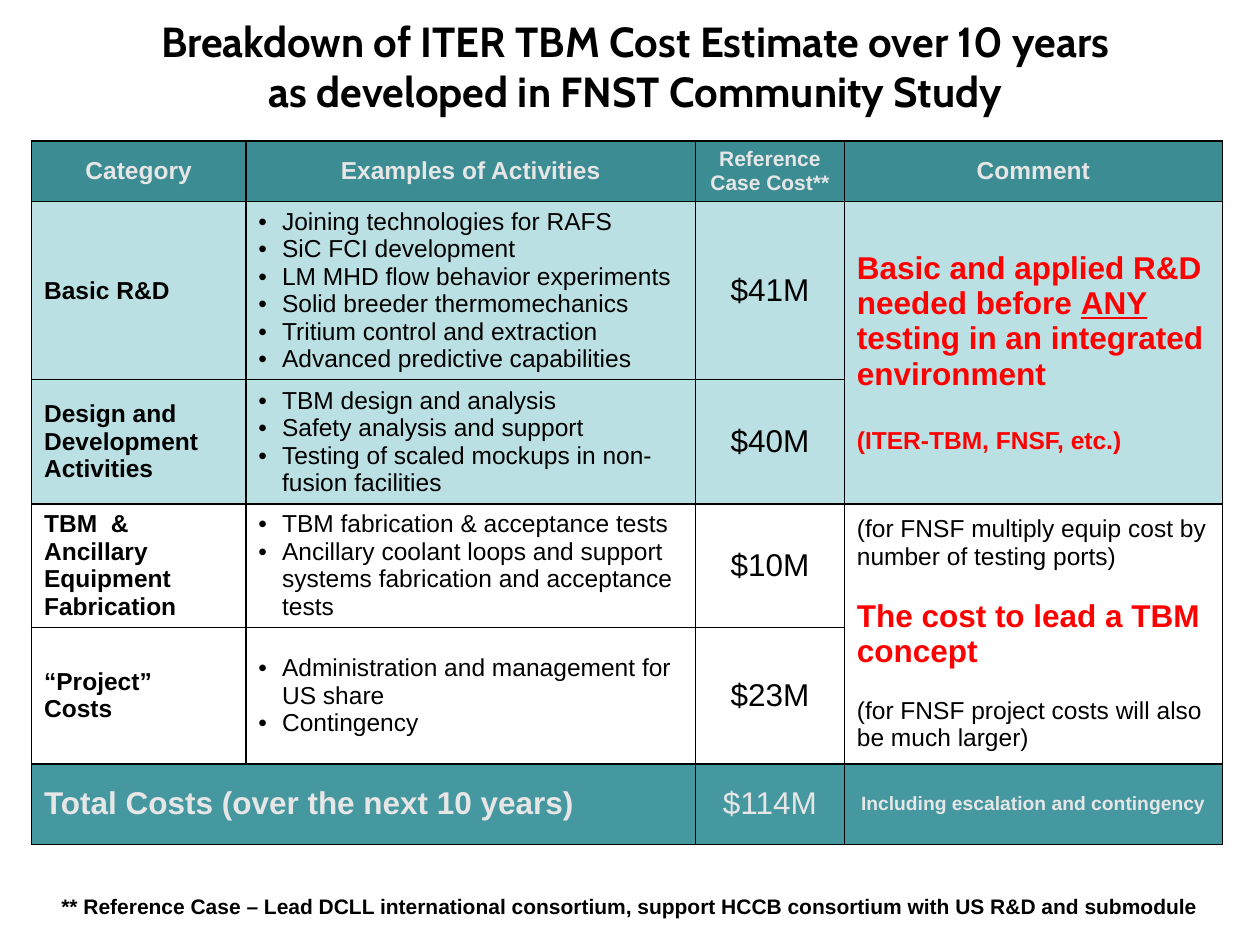
from copy import deepcopy

from lxml import etree
from pptx import Presentation
from pptx.dml.color import RGBColor
from pptx.enum.text import MSO_ANCHOR, MSO_AUTO_SIZE, PP_ALIGN
from pptx.oxml.ns import qn
from pptx.util import Pt

LEFT, CENTER = PP_ALIGN.LEFT, PP_ALIGN.CENTER
MIDDLE = MSO_ANCHOR.MIDDLE
TITLE_ONLY = 5

COLORS = {
    "black": "000000",
    "red": "FF0000",
    "pale": "E6E6E6",
    "header": "3C8C93",
    "research": "BBE0E3",
    "total": "4597A0",
}

COLUMN_WIDTHS = [122.5, 257, 85, 216]
ROW_HEIGHTS = [34.5, 102, 71, 70.5, 78, 46]

HEADINGS = [
    ("Category", 14),
    ("Examples of Activities", 14),
    (["Reference", "Case Cost**"], 12),
    ("Comment", 14),
]

# category, activities, cost, fill
COST_ROWS = [
    ("Basic R&D",
     ["Joining technologies for RAFS", "SiC FCI development",
      "LM MHD flow behavior experiments", "Solid breeder thermomechanics",
      "Tritium control and extraction", "Advanced predictive capabilities"],
     "$41M", "research"),
    ("Design and Development Activities",
     ["TBM design and analysis", "Safety analysis and support",
      "Testing of scaled mockups in non-fusion facilities"],
     "$40M", "research"),
    ("TBM  & Ancillary Equipment Fabrication",
     ["TBM fabrication & acceptance tests",
      "Ancillary coolant loops and support systems fabrication "
      "and acceptance tests"],
     "$10M", None),
    ("“Project” \nCosts",
     ["Administration and management for US share", "Contingency"],
     "$23M", None),
]


def write(frame, content, **fmt):
    """Write a string or a list of paragraphs; each is a string or (text, format) runs."""
    paragraphs = [content] if isinstance(content, str) else content
    for index, runs in enumerate(paragraphs):
        paragraph = frame.paragraphs[0] if index == 0 else frame.add_paragraph()
        paragraph.alignment = fmt.get("align", LEFT)
        paragraph.space_before = Pt(fmt.get("gap", 0) if index else 0)
        paragraph.line_spacing = fmt.get("line_spacing", 1.0)
        if fmt.get("bullet"):
            add_bullet(paragraph)
        for text, changes in [(runs, {})] if isinstance(runs, str) else runs:
            add_runs(paragraph, text, **{**fmt, **changes})


def add_runs(paragraph, text, size=14, color="black", bold=False,
             underline=False, font="Arial", **_):
    for index, line in enumerate(text.split("\n")):
        if index:
            paragraph.add_line_break()
            line_break = paragraph._p.findall(qn("a:br"))[-1]
            line_break.append(deepcopy(run.font._element))
        run = paragraph.add_run()
        run.text = line
        run.font.name = font
        run.font.size = Pt(size)
        run.font.bold = bold
        run.font.underline = underline
        run.font.color.rgb = RGBColor.from_string(COLORS[color])


def add_bullet(paragraph, indent=13.5):
    properties = paragraph._p.get_or_add_pPr()
    properties.set("marL", str(Pt(indent)))
    properties.set("indent", str(-Pt(indent)))
    etree.SubElement(properties, qn("a:buFont"), typeface="Arial")
    etree.SubElement(properties, qn("a:buChar"), char="•")


def add_borders(cell, width=1):
    properties = cell._tc.get_or_add_tcPr()
    for side in ("lnL", "lnR", "lnT", "lnB"):
        line = etree.SubElement(properties, qn(f"a:{side}"), w=str(Pt(width)))
        fill = etree.SubElement(line, qn("a:solidFill"))
        etree.SubElement(fill, qn("a:srgbClr"), val=COLORS["black"])


class CostSlide:
    """Holds the presentation, its current slide and the shared style."""

    def __init__(self):
        self.deck = Presentation()
        self.deck.slide_width, self.deck.slide_height = Pt(720), Pt(540)
        self.slide = self.deck.slides.add_slide(self.deck.slide_layouts[TITLE_ONLY])

    def title(self, text, left, top, width, height):
        title = self.slide.shapes.title
        title.left, title.top = Pt(left), Pt(top)
        title.width, title.height = Pt(width), Pt(height)
        frame = title.text_frame
        frame.auto_size = MSO_AUTO_SIZE.NONE
        frame.vertical_anchor = MIDDLE
        write(frame, text, size=24, bold=True, font="Cabin", align=CENTER)

    def table(self, left, top, widths, heights):
        table = self.slide.shapes.add_table(
            len(heights), len(widths), Pt(left), Pt(top),
            Pt(sum(widths)), Pt(sum(heights))).table
        table.first_row = table.horz_banding = False
        for column, width in zip(table.columns, widths):
            column.width = Pt(width)
        for row, height in zip(table.rows, heights):
            row.height = Pt(height)
        for cell in table.iter_cells():
            add_borders(cell)
            cell.fill.background()
        return table

    def cell(self, cell, content, fill=None, **fmt):
        cell.vertical_anchor = MIDDLE
        if fill:
            cell.fill.solid()
            cell.fill.fore_color.rgb = RGBColor.from_string(COLORS[fill])
        write(cell.text_frame, content, **fmt)

    def note(self, text, left, top, width, height, **fmt):
        frame = self.slide.shapes.add_textbox(
            Pt(left), Pt(top), Pt(width), Pt(height)).text_frame
        frame.word_wrap = True
        write(frame, text, **fmt)


def fill_cost_table(page, table):
    for column, (heading, size) in enumerate(HEADINGS):
        page.cell(table.cell(0, column), heading, "header", size=size,
                  color="pale", bold=True, align=CENTER)

    for row, (category, activities, cost, fill) in enumerate(COST_ROWS, start=1):
        page.cell(table.cell(row, 0), category, fill, bold=True)
        page.cell(table.cell(row, 1), activities, fill, bullet=True)
        page.cell(table.cell(row, 2), cost, fill, size=18, align=CENTER)

    for first_row in (1, 3):
        table.cell(first_row, 3).merge(table.cell(first_row + 1, 3))
    page.cell(table.cell(1, 3), [
        [("Basic and applied R&D needed before ", {}),
         ("ANY", {"underline": True}),
         (" testing in an integrated environment", {})],
        [("(ITER-TBM, FNSF, etc.)", {"size": 14})],
    ], "research", size=18, color="red", bold=True, gap=20)
    page.cell(table.cell(3, 3), [
        "(for FNSF multiply equip cost by number of testing ports)",
        [("The cost to lead a TBM concept",
          {"size": 18, "color": "red", "bold": True})],
        "(for FNSF project costs will also be much larger)",
    ], gap=16)

    total_row = len(COST_ROWS) + 1
    table.cell(total_row, 0).merge(table.cell(total_row, 1))
    page.cell(table.cell(total_row, 0), "Total Costs (over the next 10 years)",
              "total", size=18, color="pale", bold=True)
    page.cell(table.cell(total_row, 2), "$114M", "total", size=18,
              color="pale", align=CENTER)
    page.cell(table.cell(total_row, 3), "Including escalation and contingency",
              "total", size=11, color="pale", bold=True, align=CENTER)


def main():
    page = CostSlide()
    page.title("Breakdown of ITER TBM Cost Estimate over 10 years\n"
               "as developed in FNST Community Study", 30, 14, 666, 47)
    fill_cost_table(page, page.table(18, 80.5, COLUMN_WIDTHS, ROW_HEIGHTS))
    page.note("** Reference Case – Lead DCLL international consortium, "
              "support HCCB consortium with US R&D and submodule",
              0, 510, 720, 19, size=12, bold=True, align=CENTER, line_spacing=0.8)
    page.deck.save("out.pptx")


if __name__ == "__main__":
    main()
